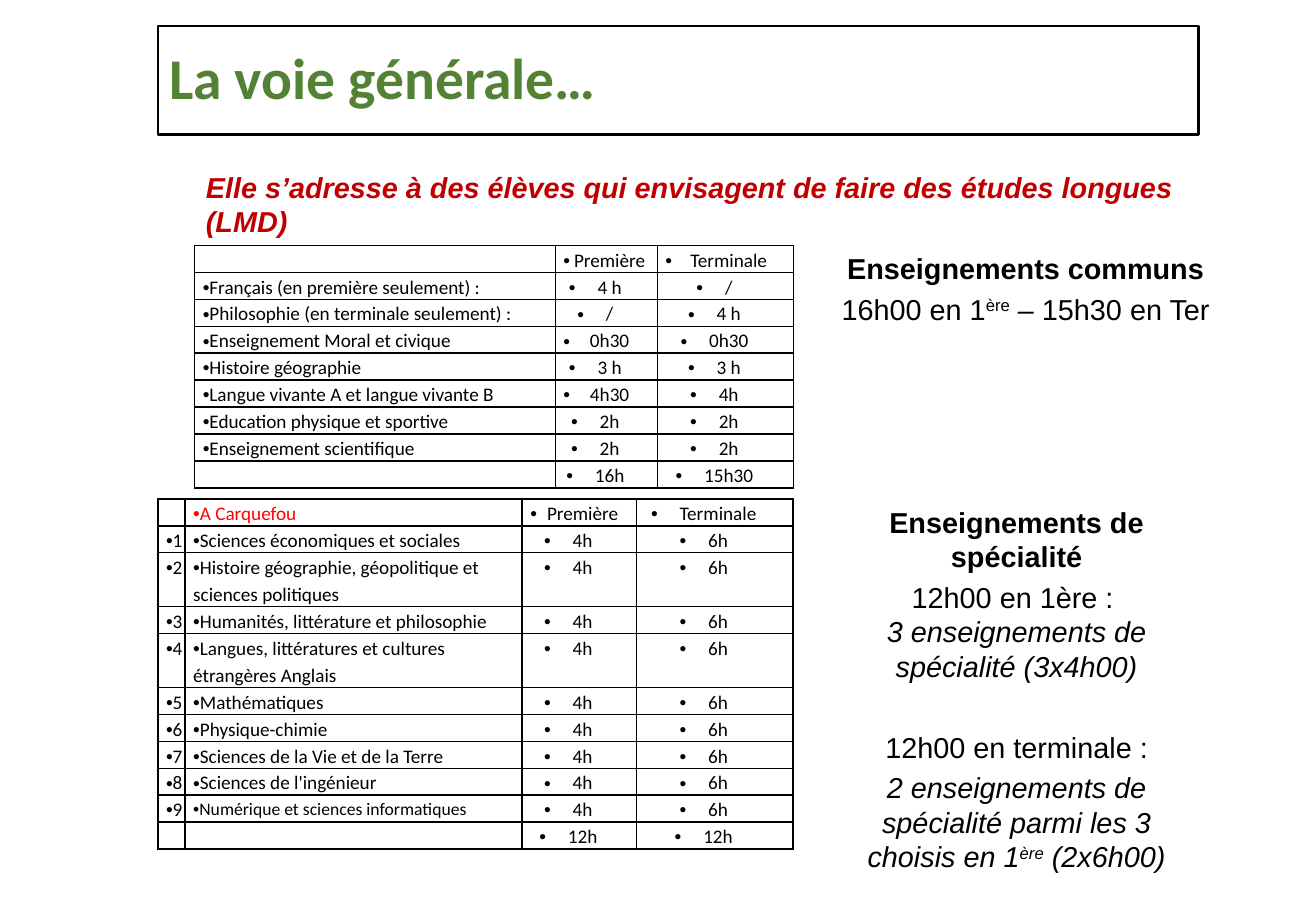
from dataclasses import dataclass

from lxml.etree import SubElement
from pptx import Presentation
from pptx.dml.color import RGBColor as Rgb
from pptx.enum.shapes import MSO_SHAPE as Preset
from pptx.enum.text import MSO_ANCHOR as Anchor, PP_ALIGN as Align
from pptx.oxml.ns import qn
from pptx.util import Cm, Pt


@dataclass(frozen=True)
class Theme:
    black: Rgb = Rgb(0x00, 0x00, 0x00)
    green: Rgb = Rgb(0x54, 0x82, 0x35)
    crimson: Rgb = Rgb(0xC0, 0x00, 0x00)
    red: Rgb = Rgb(0xFF, 0x00, 0x00)
    table_font: str = "Calibri"
    body_font: str = "Arial"
    title_size: float = 36
    body_size: float = 18
    cell_size: float = 12
    small_size: float = 11


THEME = Theme()


@dataclass(frozen=True)
class Piece:
    text: str
    bold: bool = False
    italic: bool = False
    raised: bool = False
    color: Rgb = THEME.black
    break_after: bool = False


@dataclass(frozen=True)
class Line:
    pieces: tuple[Piece, ...]
    space_before: float = 3.6


@dataclass(frozen=True)
class Note:
    left: float
    top: float
    width: float
    height: float
    lines: tuple[Line, ...]
    align: Align = Align.CENTER


@dataclass(frozen=True)
class Timetable:
    left: float
    top: float
    widths: tuple[float, ...]
    label_columns: int
    rows: tuple[tuple[str, ...], ...]


ROW_HEIGHT = 0.59
HANGING = 0.63
TOWN = "A Carquefou"
COMPUTING = "Numérique et sciences informatiques"
HEADINGS = ("Première", "Terminale")
SPECIALTIES = (
    "Sciences économiques et sociales",
    "Histoire géographie, géopolitique et sciences politiques",
    "Humanités, littérature et philosophie",
    "Langues, littératures et cultures étrangères Anglais",
    "Mathématiques",
    "Physique-chimie",
    "Sciences de la Vie et de la Terre",
    "Sciences de l'ingénieur",
    COMPUTING,
)

TIMETABLES = (
    Timetable(4.29, 5.41, (7.95, 2.25, 3), 1, (
        ("", *HEADINGS),
        ("Français (en première seulement) :", "4 h", "/"),
        ("Philosophie (en terminale seulement) :", "/", "4 h"),
        ("Enseignement Moral et civique", "0h30", "0h30"),
        ("Histoire géographie", "3 h", "3 h"),
        ("Langue vivante A et langue vivante B", "4h30", "4h"),
        ("Education physique et sportive", "2h", "2h"),
        ("Enseignement scientifique", "2h", "2h"),
        ("", "16h", "15h30"),
    )),
    Timetable(3.48, 11, (0.6, 7.43, 2.52, 3.45), 2, (
        ("", TOWN, *HEADINGS),
        *((str(rank), name, "4h", "6h") for rank, name in enumerate(SPECIALTIES, 1)),
        ("", "", "12h", "12h"),
    )),
)

NOTES = (
    Note(17.91, 5.41, 9.4, 1.96, (
        Line((Piece("Enseignements communs", bold=True),)),
        Line((Piece("16h00 en 1"), Piece("ère", raised=True), Piece(" – 15h30 en Ter"))),
    )),
    Note(18.31, 11, 8.2, 8.56, (
        Line((Piece("Enseignements de spécialité", bold=True),)),
        Line((Piece("12h00 en 1ère : ", break_after=True),
              Piece("3 enseignements de spécialité (3x4h00)", italic=True))),
        Line((Piece("12h00 en terminale :"),), space_before=29),
        Line((Piece("2 enseignements de spécialité parmi les 3 choisis en 1", italic=True),
              Piece("ère", italic=True, raised=True), Piece(" (2x6h00)", italic=True))),
    )),
    Note(4.29, 3.61, 23.01, 1.8, (
        Line((Piece("Elle s’adresse à des élèves qui envisagent de faire des études longues (LMD)",
                    bold=True, italic=True, color=THEME.crimson),)),
    ), Align.LEFT),
)


def style_font(font, name: str, size: float, color: Rgb) -> None:
    font.name, font.size = name, Pt(size)
    font.color.rgb = color


def draw_title(slide) -> None:
    banner = slide.shapes.add_shape(Preset.RECTANGLE, Cm(3.48), Cm(0.58), Cm(22.94), Cm(2.39))
    banner.shadow.inherit = False
    banner.fill.background()
    banner.line.color.rgb, banner.line.width = THEME.black, Pt(1.5)
    banner.text_frame.text = "La voie générale…"
    banner.text_frame.vertical_anchor = Anchor.MIDDLE
    heading = banner.text_frame.paragraphs[0]
    heading.alignment, heading.line_spacing = Align.LEFT, 0.9
    style_font(heading.runs[0].font, THEME.table_font, THEME.title_size, THEME.green)
    heading.runs[0].font.bold = True


def draw_note(slide, note: Note) -> None:
    frame = slide.shapes.add_textbox(
        Cm(note.left), Cm(note.top), Cm(note.width), Cm(note.height)).text_frame
    frame.word_wrap = True
    for index, line in enumerate(note.lines):
        paragraph = frame.add_paragraph() if index else frame.paragraphs[0]
        paragraph.alignment = note.align
        if index:
            paragraph.space_before = Pt(line.space_before)
        for piece in line.pieces:
            run = paragraph.add_run()
            run.text = piece.text
            style_font(run.font, THEME.body_font, THEME.body_size, piece.color)
            run.font.bold, run.font.italic = piece.bold, piece.italic
            if piece.raised:
                run._r.get_or_add_rPr().set("baseline", "30000")
            if piece.break_after:
                paragraph.add_line_break()


def add_borders(cell) -> None:
    properties = cell._tc.get_or_add_tcPr()
    for side in ("a:lnL", "a:lnR", "a:lnT", "a:lnB"):
        border = SubElement(properties, qn(side), w=str(Pt(1)))
        SubElement(SubElement(border, qn("a:solidFill")), qn("a:srgbClr"), val=str(THEME.black))


def fill_cell(cell, text: str, is_label: bool) -> None:
    cell.margin_left = cell.margin_right = Cm(0.18)
    cell.margin_top = cell.margin_bottom = 0
    add_borders(cell)
    cell.fill.background()
    cell.text_frame.text = text
    paragraph = cell.text_frame.paragraphs[0]
    paragraph.alignment = Align.LEFT if is_label else Align.CENTER
    paragraph.line_spacing = 1.15
    if not text:
        SubElement(paragraph._p, qn("a:endParaRPr"), sz=str(THEME.cell_size * 100))
        return
    # Bullet, hanging in the hour columns only
    layout = paragraph._p.get_or_add_pPr()
    layout.set("marL", "0")
    layout.set("indent", "0" if is_label else str(-Cm(HANGING)))
    SubElement(layout, qn("a:buFont"), typeface=THEME.body_font)
    SubElement(layout, qn("a:buChar"), char="•")
    style_font(paragraph.runs[0].font, THEME.table_font,
               THEME.small_size if text == COMPUTING else THEME.cell_size,
               THEME.red if text == TOWN else THEME.black)


def draw_timetable(slide, timetable: Timetable) -> None:
    grid = slide.shapes.add_table(
        len(timetable.rows), len(timetable.widths), Cm(timetable.left), Cm(timetable.top),
        Cm(sum(timetable.widths)), Cm(ROW_HEIGHT * len(timetable.rows))).table
    grid.first_row = grid.horz_banding = False
    for column, width in zip(grid.columns, timetable.widths):
        column.width = Cm(width)
    for row, texts in zip(grid.rows, timetable.rows):
        row.height = Cm(ROW_HEIGHT)
        for index, (cell, text) in enumerate(zip(row.cells, texts)):
            fill_cell(cell, text, index < timetable.label_columns)


def main() -> None:
    deck = Presentation()
    deck.slide_width, deck.slide_height = Cm(29.01), Cm(20.02)
    slide = deck.slides.add_slide(deck.slide_layouts[6])
    draw_title(slide)
    # Hours per subject
    for timetable in TIMETABLES:
        draw_timetable(slide, timetable)
    # Introduction and side comments
    for note in NOTES:
        draw_note(slide, note)
    deck.save("out.pptx")


if __name__ == "__main__":
    main()
